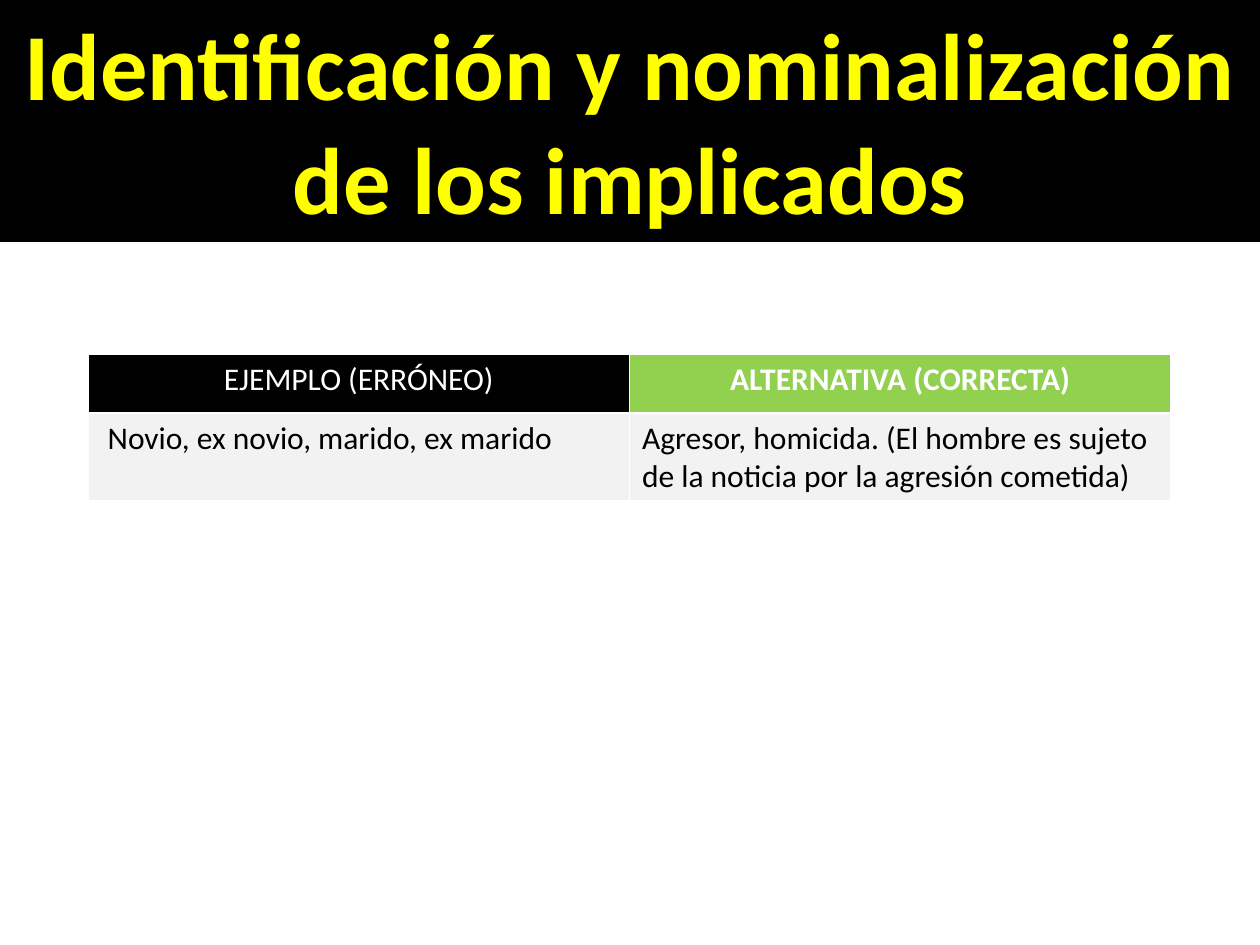
from pptx import Presentation
from pptx.dml.color import RGBColor
from pptx.enum.text import PP_ALIGN
from pptx.util import Pt

CENTER, LEFT = PP_ALIGN.CENTER, PP_ALIGN.LEFT
BLACK = RGBColor(0x00, 0x00, 0x00)
WHITE = RGBColor(0xFF, 0xFF, 0xFF)
YELLOW = RGBColor(0xFF, 0xFF, 0x00)
GREEN = RGBColor(0x92, 0xD0, 0x50)
GRAY = RGBColor(0xF2, 0xF2, 0xF2)
SCALE = 914400 / 126


def px(count):
    return round(count * SCALE)


class Deck:
    font = "Calibri"

    def __init__(self, wide, high):
        self.show = Presentation()
        self.show.slide_width, self.show.slide_height = px(wide), px(high)
        self.slide = self.show.slides.add_slide(self.show.slide_layouts[6])

    def label(self, frame, text, color, align, **form):
        para = frame.paragraphs[0]
        para.alignment = align
        run = para.add_run()
        run.text = text
        run.font.color.rgb = color
        for name, value in {"name": self.font, **form}.items():
            setattr(run.font, name, value)

    def paint(self, item, color):
        item.fill.solid()
        item.fill.fore_color.rgb = color

    def banner(self, box, text, fill, color):
        shape = self.slide.shapes.add_textbox(*map(px, box))
        self.paint(shape, fill)
        shape.text_frame.word_wrap = True
        self.label(shape.text_frame, text, color, CENTER, size=Pt(54), bold=True)

    def table(self, box, heights, rows):
        grid = self.slide.shapes.add_table(len(rows), len(rows[0]), *map(px, box)).table
        for line, high, cells in zip(grid.rows, heights, rows):
            line.height = px(high)
            for cell, (text, fill, color, align, bold) in zip(line.cells, cells):
                self.paint(cell, fill)
                self.label(cell.text_frame, text, color, align, size=Pt(18), bold=bold)


def main():
    deck = Deck(1260, 945)
    deck.banner((0, 0, 1260, 242), "Identificación y nominalización de los implicados", BLACK, YELLOW)
    deck.table((88, 354, 1083, 147), (59, 88), [
        [("EJEMPLO (ERRÓNEO)", BLACK, WHITE, CENTER, False),
         ("ALTERNATIVA (CORRECTA)", GREEN, WHITE, CENTER, True)],
        [(" Novio, ex novio, marido, ex marido", GRAY, BLACK, LEFT, False),
         ("Agresor, homicida. (El hombre es sujeto de la noticia por la agresión cometida)",
          GRAY, BLACK, LEFT, False)],
    ])
    deck.show.save("out.pptx")


if __name__ == "__main__":
    main()
